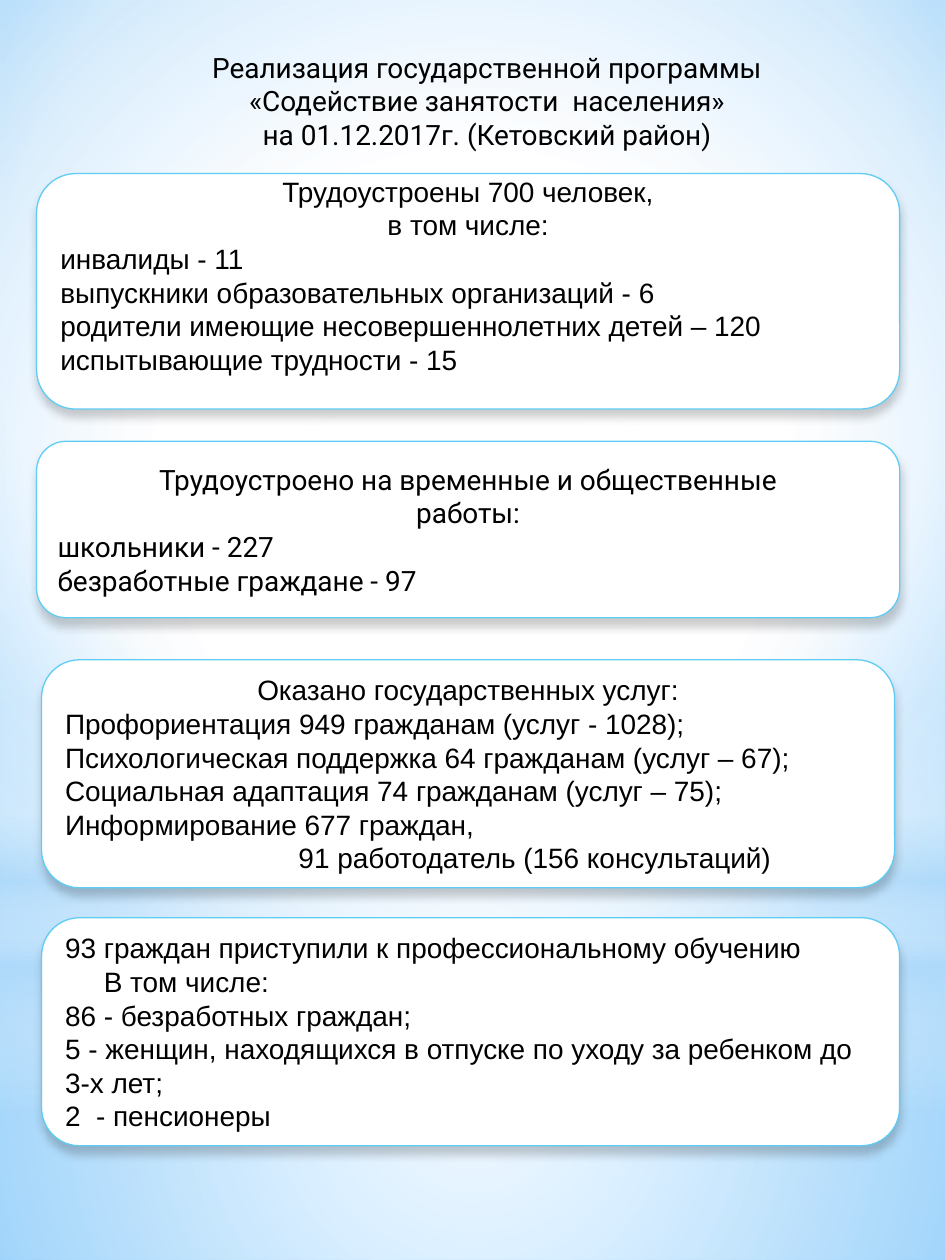
from lxml import etree
from pptx import Presentation
from pptx.dml.color import RGBColor
from pptx.enum.shapes import MSO_SHAPE as SHAPE
from pptx.enum.text import MSO_ANCHOR as ANCHOR, PP_ALIGN as ALIGN
from pptx.oxml.ns import qn
from pptx.util import Pt

WIDTH, HEIGHT = 540, 720
SIZE = 16
BLANK_LINE = 18.4
CENTER = "center"

BACKDROP = [(0, "FFFFFF", 100), (60, "FFFFFF", 100), (100, "5BB9FF", 100)]
MIDDLE = (50, 50, 50, 50)
GLOWS = [
    (SHAPE.RECTANGLE, 535.68, 184.32, MIDDLE,
     [(0, "FFFFFF", 91), (37, "FFFFFF", 76), (100, "B4DCFA", 79)]),
    (SHAPE.RECTANGLE, 0, 535.68, MIDDLE,
     [(0, "FFFFFF", 89), (48, "FFFFFF", 62), (100, "B4DCFA", 79)]),
    (SHAPE.RECTANGLE, 395.28, 239.76, None,
     [(0, "FFFFFF", 0), (29, "FFFFFF", 30), (45, "B4DCFA", 40),
      (55, "FFFFFF", 26), (65, "B4DCFA", 60), (100, "FFFFFF", 0)]),
    (SHAPE.OVAL, 167.76, 535.68, MIDDLE,
     [(0, "FFFFFF", 100), (56, "FFFFFF", 0)]),
]

TITLE = [
    ("Реализация государственной программы", CENTER),
    ("«Содействие занятости  населения»", CENTER),
    ("на 01.12.2017г. (Кетовский район)", CENTER),
]
CARDS = [
    ((20.88, 99.2, 493.2, 134.6), "Arial", BLANK_LINE, [
        ("Трудоустроены 700 человек,", CENTER),
        ("в том числе:", CENTER),
        ("инвалиды - 11", 0),
        ("выпускники образовательных организаций - 6", 0),
        ("родители имеющие несовершеннолетних детей – 120", 0),
        ("испытывающие трудности - 15", 0),
    ]),
    ((20.88, 252.2, 493.2, 100.8), "Roboto", 0, [
        ("Трудоустроено на временные и общественные", CENTER),
        ("работы:", CENTER),
        ("школьники - 227", 0),
        ("безработные граждане - 97", 0),
    ]),
    ((23.76, 377, 487.5, 130.3), "Arial", 0, [
        ("Оказано государственных услуг:", CENTER),
        ("Профориентация 949 гражданам (услуг - 1028);", 0),
        ("Психологическая поддержка 64 гражданам (услуг – 67);", 0),
        ("Социальная адаптация 74 гражданам (услуг – 75);", 0),
        ("Информирование 677 граждан,", 0),
        ("91 работодатель (156 консультаций)", 133.4),
    ]),
    ((23.76, 524.4, 490.3, 130.3), "Arial", 0, [
        ("93 граждан приступили к профессиональному обучению", 0),
        ("В том числе:", 22.2),
        ("86 - безработных граждан;", 0),
        ("5 - женщин, находящихся в отпуске по уходу за ребенком до 3-х лет;", 0),
        ("2  - пенсионеры", 0),
    ]),
]


def rgb(value):
    return RGBColor.from_string(value)


def add_color(parent, value, alpha):
    color = etree.SubElement(parent, qn("a:srgbClr"), val=value)
    if alpha < 100:
        etree.SubElement(color, qn("a:alpha"), val=str(alpha * 1000))


def set_gradient(fill, element, stops, focus):
    fill.gradient()
    grad = element.find(".//" + qn("a:gradFill"))
    for child in list(grad):
        grad.remove(child)
    stop_list = etree.SubElement(grad, qn("a:gsLst"))
    for position, value, alpha in stops:
        stop = etree.SubElement(stop_list, qn("a:gs"), pos=str(position * 1000))
        add_color(stop, value, alpha)
    if focus:
        shade = etree.SubElement(grad, qn("a:path"), path="circle")
        sides = {side: str(v * 1000) for side, v in zip("ltrb", focus)}
        etree.SubElement(shade, qn("a:fillToRect"), **sides)
    else:
        etree.SubElement(grad, qn("a:lin"), ang="5400000", scaled="0")


def add_shadow(sp):
    sp.shadow.inherit = False
    effects = sp.element.spPr.find(qn("a:effectLst"))
    shadow = etree.SubElement(effects, qn("a:outerShdw"), blurRad=str(Pt(5)),
                              dist=str(Pt(4)), dir="5400000", rotWithShape="0")
    add_color(shadow, "000000", 20)


def write(tf, lines, font):
    tf.word_wrap = True
    for i, (text, place) in enumerate(lines):
        p = tf.paragraphs[0] if i == 0 else tf.add_paragraph()
        p.alignment = ALIGN.CENTER if place == CENTER else ALIGN.LEFT
        if place not in (CENTER, 0):
            p._p.get_or_add_pPr().set("marL", str(Pt(place)))
        r = p.add_run()
        r.text = text
        r.font.name, r.font.size = font, Pt(SIZE)
        r.font.color.rgb = rgb("000000")


def main():
    """Build the employment programme slide."""
    prs = Presentation()
    prs.slide_width, prs.slide_height = Pt(WIDTH), Pt(HEIGHT)
    s = prs.slides.add_slide(prs.slide_layouts[6])
    set_gradient(s.background.fill, s.element, BACKDROP, (20, 10, 20, 60))

    for kind, top, height, focus, stops in GLOWS:
        sp = s.shapes.add_shape(kind, 0, Pt(top), Pt(WIDTH), Pt(height))
        sp.shadow.inherit = False
        sp.line.fill.background()
        set_gradient(sp.fill, sp.element, stops, focus)

    box = s.shapes.add_textbox(Pt(37.44), Pt(25.2), Pt(481.7), Pt(65.5))
    write(box.text_frame, TITLE, "Roboto")

    for frame, font, gap_below, lines in CARDS:
        sp = s.shapes.add_shape(SHAPE.ROUNDED_RECTANGLE, *map(Pt, frame))
        sp.fill.solid()
        sp.fill.fore_color.rgb = rgb("FFFFFF")
        sp.line.color.rgb = rgb("5ECCF3")
        sp.line.width = Pt(0.75)
        add_shadow(sp)
        tf = sp.text_frame
        tf.vertical_anchor = ANCHOR.MIDDLE
        tf.margin_bottom = Pt(3.6 + gap_below)
        write(tf, lines, font)

    prs.save("out.pptx")


if __name__ == "__main__":
    main()
